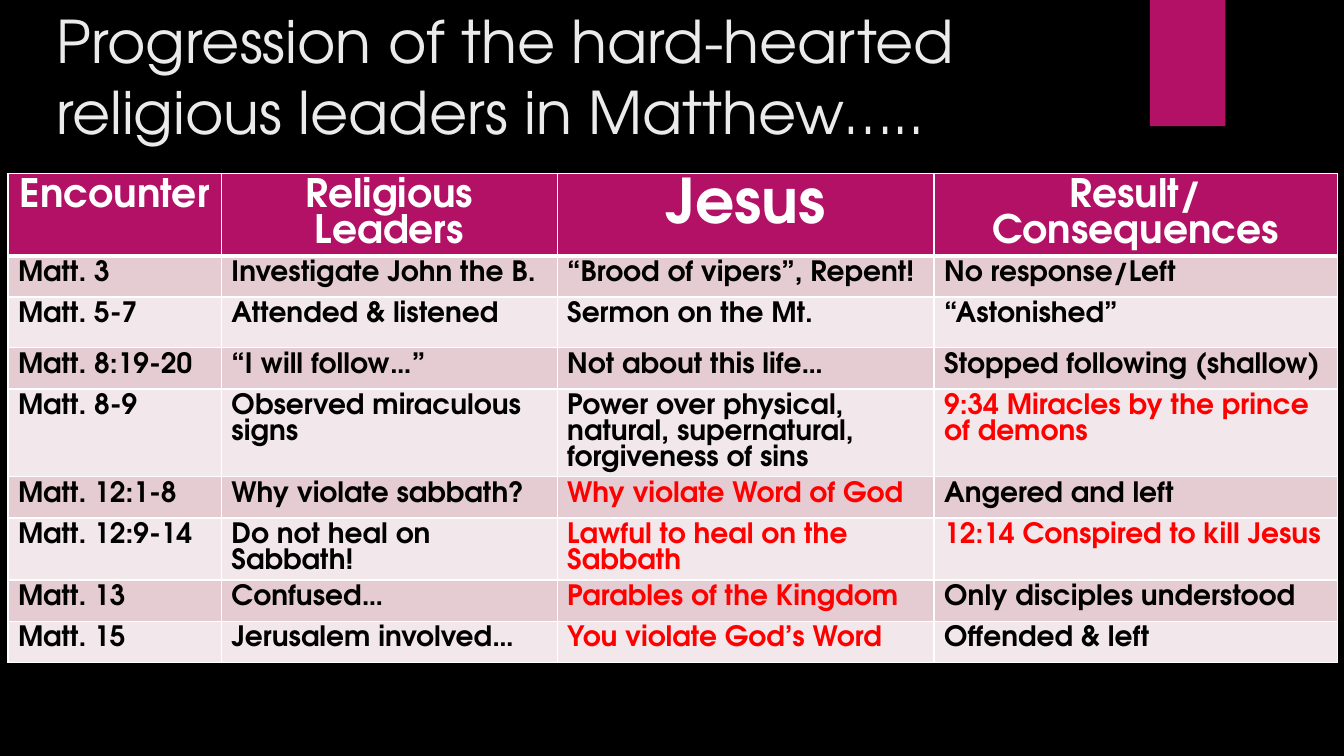
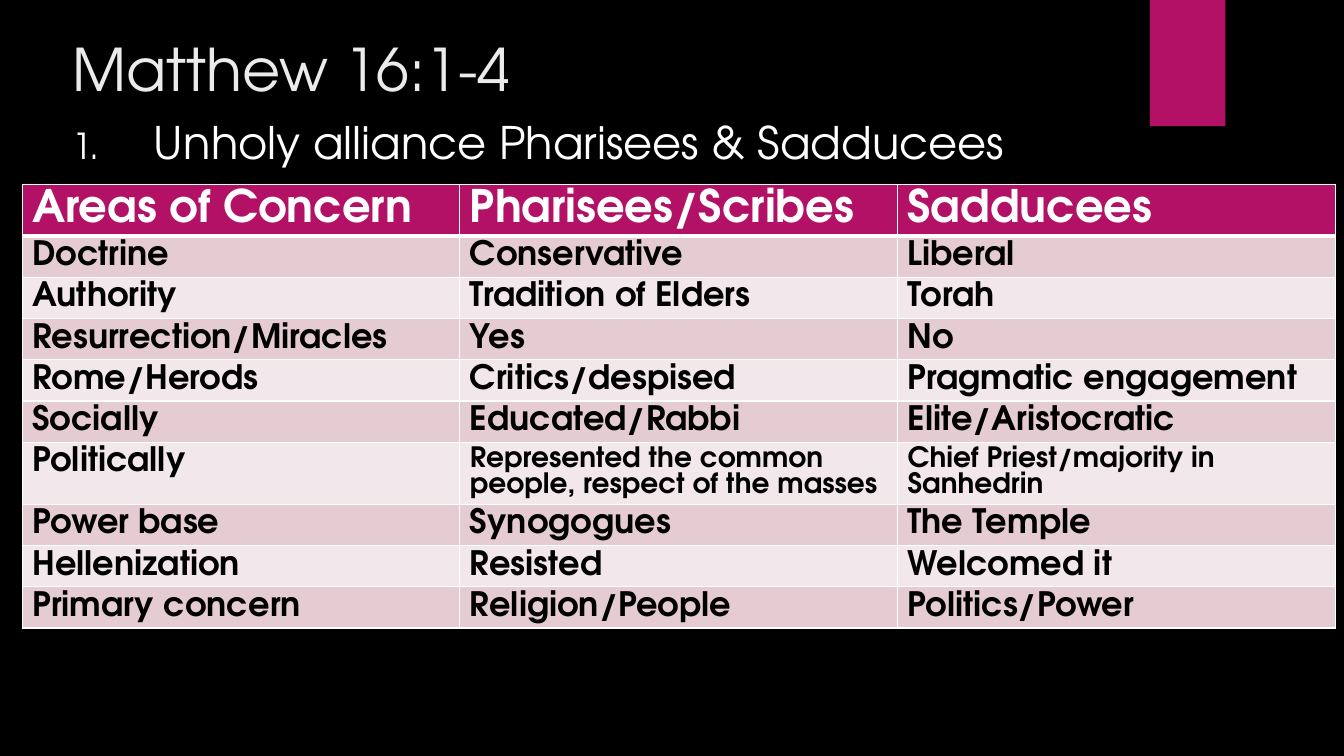
from pptx import Presentation as Deck
from pptx.dml.color import RGBColor as Rgb
from pptx.enum.shapes import MSO_SHAPE as Form
from pptx.enum.text import MSO_ANCHOR as Anchor, PP_ALIGN as Align
from pptx.oxml import parse_xml as to_xml
from pptx.oxml.ns import nsdecls as decls
from pptx.util import Cm, Pt

FACE = "TeX Gyre Adventor"
PINK, WHITE, BLACK, RED = "B31166", "FFFFFF", "000000", "FF0000"
BANDS = "F2E7EA", "E5CCD3"
TITLE = {"size": 42, "color": "EBEBEB"}
POINT = {"size": 32, "color": WHITE}
ROW, PAIR = 1.04, 1.56

LEADERS = [
    ["Encounter", "Religious Leaders", "Jesus", "Result/\nConsequences"],
    ["Matt. 3", "Investigate John the B.", "“Brood of vipers”, Repent!",
     "No response/Left"],
    ["Matt. 5-7", "Attended & listened", "Sermon on the Mt.", "“Astonished”"],
    ["Matt. 8:19-20", "“I will follow…”", "Not about this life…",
     "Stopped following (shallow)"],
    ["Matt. 8-9", "Observed miraculous signs",
     "Power over physical, natural, supernatural, forgiveness of sins",
     "9:34 Miracles by the prince of demons"],
    ["Matt. 12:1-8", "Why violate sabbath?", "Why violate Word of God",
     "Angered and left"],
    ["Matt. 12:9-14", "Do not heal on Sabbath!",
     "Lawful to heal on the Sabbath", "12:14 Conspired to kill Jesus"],
    ["Matt. 13", "Confused…", "Parables of the Kingdom",
     "Only disciples understood"],
    ["Matt. 15", "Jerusalem involved…", "You violate God’s Word",
     "Offended & left"],
]
PARTIES = [
    ["Areas of Concern", "Pharisees/Scribes", "Sadducees"],
    ["Doctrine", "Conservative", "Liberal"],
    ["Authority", "Tradition of Elders", "Torah"],
    ["Resurrection/Miracles", "Yes", "No"],
    ["Rome/Herods", "Critics/despised", "Pragmatic engagement"],
    ["Socially", "Educated/Rabbi", "Elite/Aristocratic"],
    ["Politically", "Represented the common people, respect of the masses",
     "Chief Priest/majority in Sanhedrin"],
    ["Power base", "Synogogues", "The Temple"],
    ["Hellenization", "Resisted", "Welcomed it"],
    ["Primary concern", "Religion/People", "Politics/Power"],
]


def tint(code):
    """Turn a hex string into a colour."""
    return Rgb.from_string(code)


def paint(fill, code):
    """Make a fill solid in one colour."""
    fill.solid()
    fill.fore_color.rgb = tint(code)


def dress(item, looks):
    """Set each attribute named in a dict."""
    for name, value in looks.items():
        setattr(item, name, value)


def type_set(para, size, color, bold=False):
    """Give a paragraph its font."""
    dress(para.font, {"name": FACE, "size": Pt(size), "bold": bold})
    para.font.color.rgb = tint(color)


def add_page(deck):
    """Add a black slide with the pink band."""
    page = deck.slides.add_slide(deck.slide_layouts[6])
    paint(page.background.fill, BLACK)
    band = page.shapes.add_shape(
        Form.RECTANGLE, Cm(28.98), Cm(0), Cm(1.9), Cm(3.18))
    band.shadow.inherit = False
    paint(band.fill, PINK)
    band.line.fill.background()
    return page


def add_text(page, text, box, looks, number=False):
    """Add one line of text, numbered if asked."""
    frame = page.shapes.add_textbox(*map(Cm, box)).text_frame
    dress(frame, {"word_wrap": True, "vertical_anchor": Anchor.TOP})
    frame.text = text
    para = frame.paragraphs[0]
    if number:
        mark(para, looks["color"])
    type_set(para, **looks)


def mark(para, color):
    """Number a paragraph with a hanging indent."""
    props = para._p.get_or_add_pPr()
    props.set("marL", str(Cm(2.06)))
    props.set("indent", str(Cm(-2.06)))
    for part in (f'<a:buClr {decls("a")}><a:srgbClr val="{color}"/></a:buClr>',
                 f'<a:buSzPct {decls("a")} val="80000"/>',
                 f'<a:buAutoNum {decls("a")} type="arabicPeriod"/>'):
        props.append(to_xml(part))


def rule(cell, row):
    """Draw white cell borders, thick below the head row."""
    props = cell._tc.get_or_add_tcPr()
    thick = {0: "B", 1: "T"}.get(row)
    for spot, side in enumerate("LRTB"):
        width = Pt(3 if side == thick else 1)
        props.insert(spot, to_xml(
            f'<a:ln{side} {decls("a")} w="{width}"><a:solidFill>'
            f'<a:srgbClr val="{WHITE}"/></a:solidFill></a:ln{side}>'))


def fill_cell(cell, text, row, looks, align):
    """Write, colour and rule one cell."""
    cell.text = text
    paint(cell.fill, BANDS[row % 2] if row else PINK)
    rule(cell, row)
    for para in cell.text_frame.paragraphs:
        dress(para, {"alignment": align,
                     "line_spacing": Pt(looks["size"] * 0.92)})
        type_set(para, bold=True, **looks)


def add_grid(page, data, spot, wides, highs, sizes, odd, align=Align.LEFT):
    """Add a table; odd holds the looks of single cells."""
    grid = page.shapes.add_table(
        len(data), len(wides), *map(Cm, spot),
        Cm(sum(wides)), Cm(sum(highs))).table
    for col, wide in zip(grid.columns, wides):
        col.width = Cm(wide)
    for line, high in zip(grid.rows, highs):
        line.height = Cm(high)
    head, body = sizes
    for row, texts in enumerate(data):
        base = ({"size": body, "color": BLACK} if row
                else {"size": head, "color": WHITE})
        for col, text in enumerate(texts):
            fill_cell(grid.cell(row, col), text, row,
                      base | odd.get((row, col), {}),
                      Align.LEFT if row else align)


def main():
    """Build and save the deck."""
    deck = Deck()
    dress(deck, {"slide_width": Cm(33.87), "slide_height": Cm(19.05)})

    page = add_page(deck)
    add_text(page, "Progression of the hard-hearted religious leaders "
             "in Matthew…..", (1.17, 0, 26.14, 3.89), TITLE)
    reds = [(4, 3), (5, 2), (6, 2), (6, 3), (7, 2), (8, 2)]
    odd = {spot: {"color": RED} for spot in reds} | {(0, 2): {"size": 44}}
    add_grid(page, LEADERS, (0.2, 4.37), [5.38, 8.46, 9.5, 10.16],
             [2.06, ROW, 1.28, ROW, 2.21, ROW, PAIR, ROW, ROW],
             (28, 20), odd, Align.CENTER)

    page = add_page(deck)
    add_text(page, "Matthew 16:1-4", (1.57, 0.69, 26.14, 3.89), TITLE)
    add_text(page, "Unholy alliance Pharisees & Sadducees",
             (1.57, 2.77, 27.76, 3.66), POINT, number=True)
    odd = {(6, col): {"size": 20} for col in (1, 2)}
    add_grid(page, PARTIES, (0.56, 4.65), [11.03] * 3,
             [1.29] + [ROW] * 5 + [PAIR] + [ROW] * 3, (32, 24), odd)

    deck.save("out.pptx")


if __name__ == "__main__":
    main()
